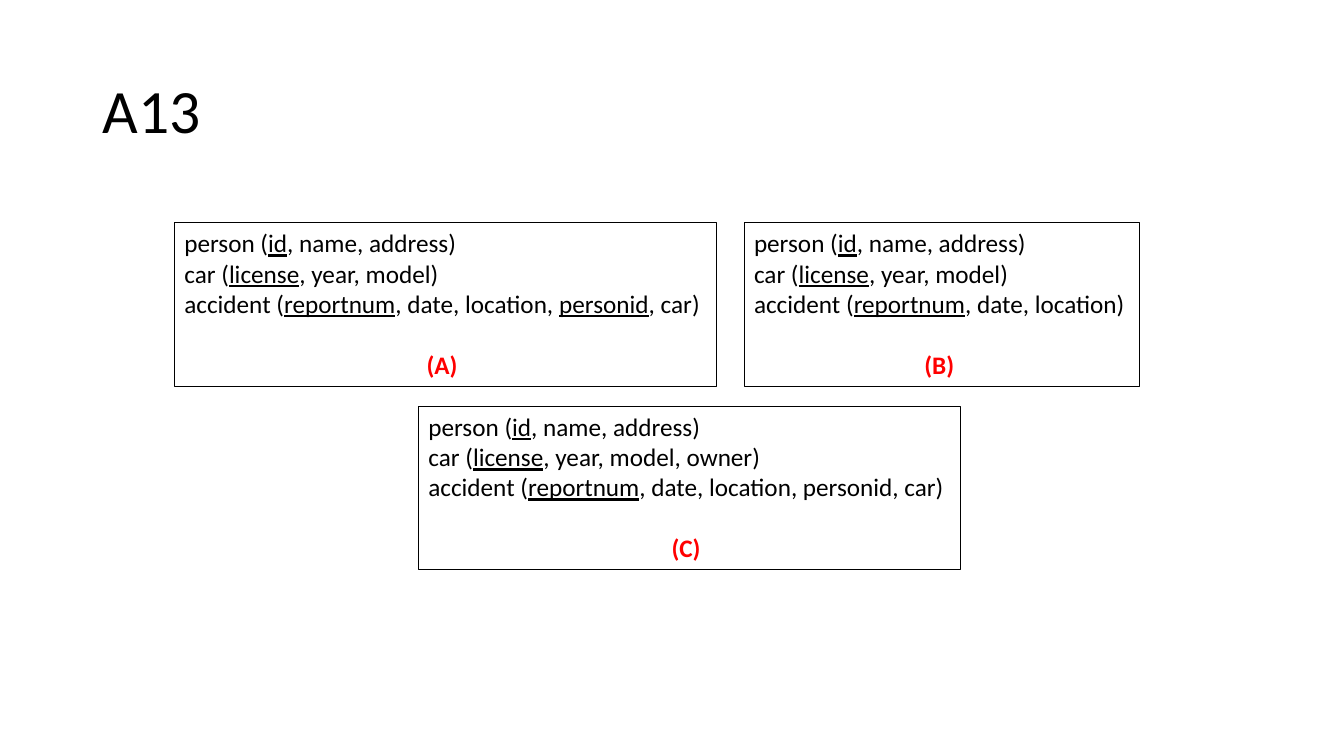
from pptx import Presentation
from pptx.dml.color import RGBColor
from pptx.enum.text import MSO_ANCHOR, MSO_AUTO_SIZE, PP_ALIGN
from pptx.util import Inches, Pt

BODY = {"name": "Calibri", "size": Pt(18)}
KEY = BODY | {"underline": True}
LABEL = BODY | {"bold": True}
TITLE = {"name": "Calibri", "size": Pt(44)}

PERSON = "person (_id_, name, address)"
CAR = "car (_license_, year, model)"
OWNED = "car (_license_, year, model, owner)"
EVENT = "accident (_reportnum_, date, location"

TOP, LOW = 2.21, 4.03
WIDE, HIGH = 5.38, 1.62
SCHEMAS = [
    ("(A)", (1.73, TOP, WIDE, HIGH), [PERSON, CAR, EVENT + ", _personid_, car)"]),
    ("(B)", (7.38, TOP, 3.92, HIGH), [PERSON, CAR, EVENT + ")"]),
    ("(C)", (4.15, LOW, WIDE, HIGH), [PERSON, OWNED, EVENT + ", personid, car)"]),
]


def color(code):
    return RGBColor.from_string(code)


def add_run(para, text, style, code="000000"):
    run = para.add_run()
    run.text = text
    for name, value in style.items():
        setattr(run.font, name, value)
    run.font.color.rgb = color(code)


def add_title(slide, box, text):
    frame = slide.shapes.add_textbox(*map(Inches, box)).text_frame
    frame.word_wrap = True
    frame.vertical_anchor = MSO_ANCHOR.MIDDLE
    para = frame.paragraphs[0]
    para.line_spacing = 0.9
    add_run(para, text, TITLE)


def add_schema(slide, box, label, lines):
    shape = slide.shapes.add_textbox(*map(Inches, box))
    shape.line.color.rgb = color("000000")
    shape.line.width = Pt(0.75)
    frame = shape.text_frame
    frame.word_wrap = False
    frame.auto_size = MSO_AUTO_SIZE.SHAPE_TO_FIT_TEXT
    para = frame.paragraphs[0]
    for line in lines:
        for place, part in enumerate(line.split("_")):
            add_run(para, part, KEY if place % 2 else BODY)
        para = frame.add_paragraph()
    para.alignment = PP_ALIGN.CENTER
    para.space_before = Pt(22)
    add_run(para, label, LABEL, "FF0000")


def main():
    deck = Presentation()
    deck.slide_width = Inches(13.33)
    deck.slide_height = Inches(7.5)
    slide = deck.slides.add_slide(deck.slide_layouts[6])
    add_title(slide, (0.92, 0.4, 11.5, 1.45), "A13")
    for label, box, lines in SCHEMAS:
        add_schema(slide, box, label, lines)
    deck.save("out.pptx")


if __name__ == "__main__":
    main()
